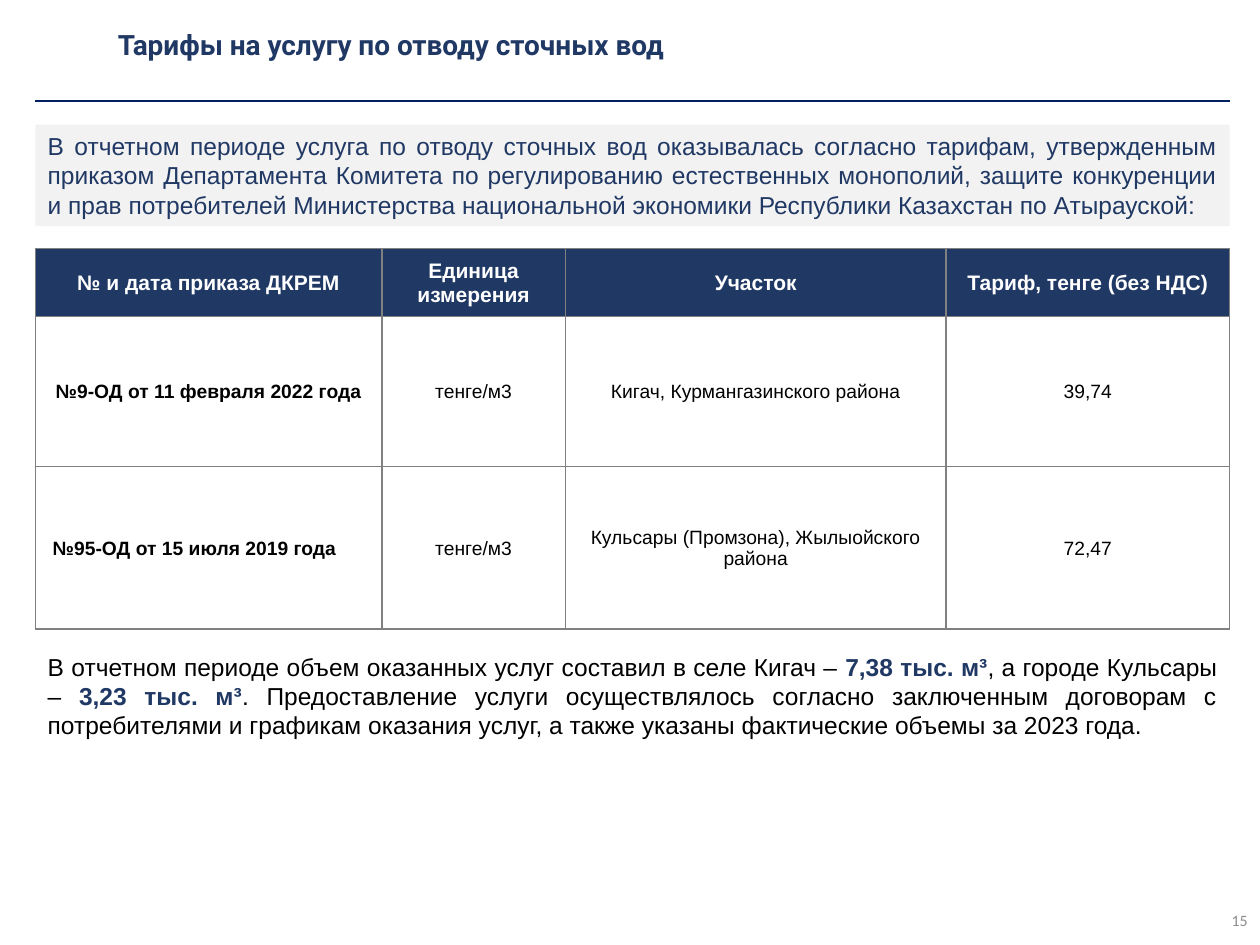
from lxml import etree
from pptx import Presentation
from pptx.dml.color import RGBColor
from pptx.enum import shapes, text
from pptx.oxml import ns
from pptx.util import Pt

HUES = {"navy": "203864", "rule": "002060", "pale": "F2F2F2", "grid": "808080",
        "white": "FFFFFF", "black": "000000", "page": "8C8C8C"}
ALIGN, ANCHOR, FIT = text.PP_ALIGN, text.MSO_ANCHOR, text.MSO_AUTO_SIZE
LEFT, WIDE = 20.16, 682.56

TITLE = "Тарифы на услугу по отводу сточных вод"
INTRO = ("В отчетном периоде услуга по отводу сточных вод оказывалась согласно тарифам, "
         "утвержденным приказом Департамента Комитета по регулированию естественных "
         "монополий, защите конкуренции и прав потребителей Министерства национальной "
         "экономики Республики Казахстан по Атырауской:")
ROWS = [
    ["№ и дата приказа ДКРЕМ", "Единица измерения", "Участок", "Тариф, тенге (без НДС)"],
    ["№9-ОД от 11 февраля 2022 года", "тенге/м3", "Кигач, Курмангазинского района", "39,74"],
    ["№95-ОД от 15 июля 2019 года", "тенге/м3",
     "Кульсары (Промзона), Жылыойского района", "72,47"],
]
# Every second part is a highlighted volume
TOTAL = ["В отчетном периоде объем оказанных услуг составил в селе Кигач – ",
         "7,38 тыс. м³", ", а городе Кульсары – ", "3,23 тыс. м³",
         ". Предоставление услуги осуществлялось согласно заключенным договорам с "
         "потребителями и графикам оказания услуг, а также указаны фактические объемы "
         "за 2023 года."]


def rgb(hue):
    return RGBColor.from_string(HUES[hue])


def style(font, size, hue, bold=False, face="Arial"):
    font.size, font.bold, font.name = Pt(size), bold, face
    font.color.rgb = rgb(hue)


def add_box(slide, box):
    shape = slide.shapes.add_textbox(*map(Pt, box))
    shape.text_frame.word_wrap = True
    return shape


def add_head(slide, box):
    """Place the title and the rule below it."""
    x, y, w, h = box
    title = slide.shapes.title
    title.left, title.top, title.width, title.height = map(Pt, (x + 40, y, w - 40, 30))
    frame = title.text_frame
    frame.auto_size, frame.vertical_anchor = FIT.NONE, ANCHOR.MIDDLE
    frame.text = TITLE
    para = frame.paragraphs[0]
    para.alignment = ALIGN.LEFT
    style(para.font, 16, "navy", True, "Roboto")

    rule = slide.shapes.add_connector(
        shapes.MSO_CONNECTOR.STRAIGHT, *map(Pt, (x, y + h, x + w, y + h)))
    rule.line.color.rgb, rule.line.width = rgb("rule"), Pt(1)
    etree.SubElement(rule._element.spPr, ns.qn("a:effectLst"))


def add_intro(slide, box):
    shape = add_box(slide, box)
    shape.fill.solid()
    shape.fill.fore_color.rgb = rgb("pale")
    para = shape.text_frame.paragraphs[0]
    para.text, para.alignment = INTRO, ALIGN.JUSTIFY
    style(para.font, 14, "navy")


def add_edges(cell):
    """Draw the four borders; must precede the cell fill."""
    props = cell._tc.get_or_add_tcPr()
    for side in ("lnL", "lnR", "lnT", "lnB"):
        line = etree.SubElement(props, ns.qn(f"a:{side}"), w=str(Pt(1)))
        fill = etree.SubElement(line, ns.qn("a:solidFill"))
        etree.SubElement(fill, ns.qn("a:srgbClr"), val=HUES["grid"])


def fill_cell(cell, words, row, col):
    head = row == 0
    add_edges(cell)
    if head:
        cell.fill.solid()
        cell.fill.fore_color.rgb = rgb("navy")
    else:
        cell.fill.background()
    cell.vertical_anchor = ANCHOR.MIDDLE
    cell.margin_left = cell.margin_right = cell.margin_top = Pt(0.7)
    cell.margin_bottom = 0
    para = cell.text_frame.paragraphs[0]
    para.text, para.alignment = words, ALIGN.CENTER
    style(para.font, 12 if head else 11, "white" if head else "black", head or col == 0)


def add_rates(slide, box):
    table = slide.shapes.add_table(len(ROWS), len(ROWS[0]), *map(Pt, box)).table
    table.first_row = table.horz_banding = False
    for col, width in zip(table.columns, (198, 105, 217.4, 162.16)):
        col.width = Pt(width)
    for row, height in zip(table.rows, (39, 85.7, 92.9)):
        row.height = Pt(height)
    for r, row in enumerate(ROWS):
        for c, words in enumerate(row):
            fill_cell(table.cell(r, c), words, r, c)
    last = table.cell(len(ROWS) - 1, 0)
    last.margin_left = Pt(9.9)
    last.text_frame.paragraphs[0].alignment = ALIGN.JUSTIFY


def add_total(slide, box):
    para = add_box(slide, box).text_frame.paragraphs[0]
    para.alignment = ALIGN.JUSTIFY
    for i, words in enumerate(TOTAL):
        run = para.add_run()
        run.text = words
        key = i % 2 == 1
        style(run.font, 14, "navy" if key else "black", key)


def add_page(slide, box):
    frame = add_box(slide, box).text_frame
    frame.vertical_anchor = ANCHOR.MIDDLE
    para = frame.paragraphs[0]
    para.text, para.alignment = "15", ALIGN.RIGHT
    style(para.font, 9, "page", face="Calibri")


def main():
    deck = Presentation()
    deck.slide_width, deck.slide_height = Pt(720), Pt(540)
    slide = deck.slides.add_slide(deck.slide_layouts[5])
    add_head(slide, (LEFT, 10.1, WIDE, 47.5))
    add_intro(slide, (LEFT, 71.2, WIDE, 58))
    add_rates(slide, (LEFT, 142, WIDE, 217.6))
    add_total(slide, (LEFT, 368.8, WIDE, 58))
    add_page(slide, (558, 511.2, 162, 28.8))
    deck.save("out.pptx")


if __name__ == "__main__":
    main()
